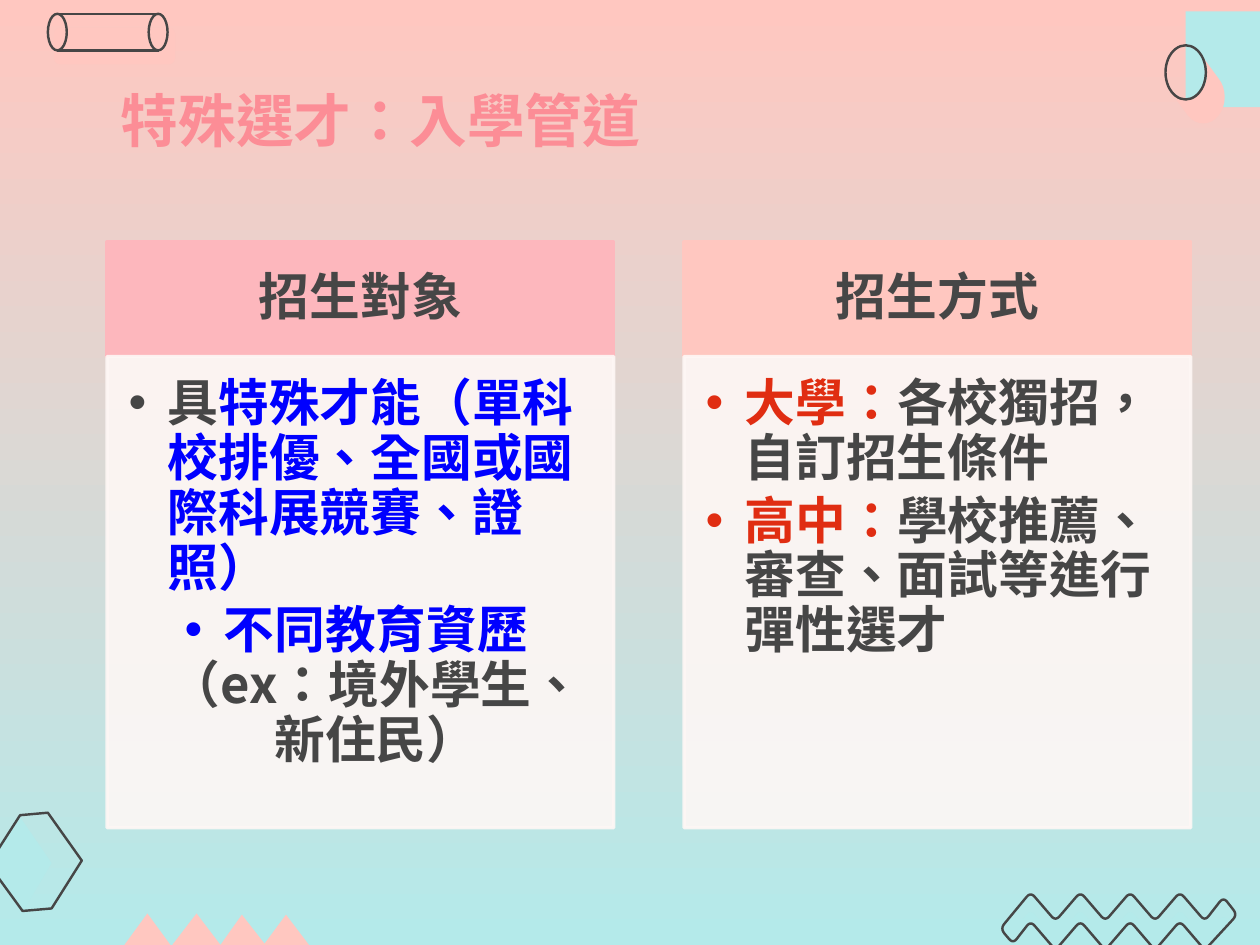
"""Build the slide on special talent admission."""
import math

from lxml import etree
from pptx import Presentation, util as u
from pptx.dml.color import RGBColor
from pptx.enum import lang, shapes, text
from pptx.oxml import ns

INK = {"pink": "FFC7C0", "teal": "B4EAEA", "dark": "464646", "rose": "FDB7BD",
       "pale": "FEF7F5", "title": "FC8D96", "blue": "0000FF", "red": "E02D12"}
FONT = "Noto Sans CJK SC"


def rgb(name):
    return RGBColor.from_string(INK[name])


def add(parent, tag, **attrs):
    return etree.SubElement(parent, ns.qn(tag), **attrs)


def fade(fill, alpha):
    for node in fill.iter(ns.qn("a:srgbClr")):
        add(node, "a:alpha", val=str(alpha * 1000))


def arc(x, y, rx, ry, start, end, count=16):
    angles = [math.radians(start + (end - start) * i / count) for i in range(count + 1)]
    return [(x + rx * math.cos(a), y + ry * math.sin(a)) for a in angles]


def bend(points, reach=0.05, count=6):
    out = []
    for i, (x, y) in enumerate(points):
        ends = []
        for px, py in (points[i - 1], points[(i + 1) % len(points)]):
            part = min(0.5, reach / math.hypot(px - x, py - y))
            ends.append((x + (px - x) * part, y + (py - y) * part))
        (ax, ay), (bx, by) = ends
        for t in (k / count for k in range(count + 1)):
            s = 1 - t
            out.append((s * s * ax + 2 * s * t * x + t * t * bx,
                        s * s * ay + 2 * s * t * y + t * t * by))
    return out


def write(frame, paras, size=29, bold=True, inset=None, anchor="TOP", after=0,
          space=None, bullet=False):
    frame.word_wrap = True
    frame.vertical_anchor = text.MSO_ANCHOR[anchor]
    if inset:
        (frame.margin_left, frame.margin_top,
         frame.margin_right, frame.margin_bottom) = map(u.Inches, inset)
    for i, (align, runs) in enumerate(paras):
        para = frame.paragraphs[0] if i == 0 else frame.add_paragraph()
        para.alignment = text.PP_ALIGN[align]
        para.space_after = u.Pt(after)
        if space:
            para.line_spacing = space
        if bullet:
            props = para._p.get_or_add_pPr()
            props.set("marL", str(u.Inches(0.31)))
            props.set("indent", str(-u.Inches(0.31)))
            add(props, "a:buFont", typeface="Arial")
            add(props, "a:buChar", char="•")
        for words, ink in runs:
            run = para.add_run()
            run.text = words
            font = run.font
            font.size, font.bold, font.name = u.Pt(size), bold, FONT
            font.language_id = lang.MSO_LANGUAGE_ID.TRADITIONAL_CHINESE
            font.color.rgb = rgb(ink)
            add(run._r.get_or_add_rPr(), "a:ea", typeface=FONT)


class Deck:
    """Hold the style and the current slide."""

    def __init__(self):
        self.show = Presentation()
        self.show.slide_width, self.show.slide_height = u.Inches(10), u.Inches(7.5)
        self.slide = self.show.slides.add_slide(self.show.slide_layouts[6])
        self.items = self.slide.shapes
        fill = self.slide.background.fill
        fill.gradient()
        fill.gradient_angle = 270
        for stop, ink, place in zip(fill.gradient_stops, ("pink", "teal"), (0, 1)):
            stop.color.rgb, stop.position = rgb(ink), place

    def paint(self, item, fill=None, line=None, width=1.4):
        item.shadow.inherit = False
        if fill:
            item.fill.solid()
            item.fill.fore_color.rgb = rgb(fill)
        else:
            item.fill.background()
        if line:
            item.line.color.rgb, item.line.width = rgb(line), u.Pt(width)
        else:
            item.line.fill.background()
        return item

    def shape(self, kind, box, **style):
        item = self.items.add_shape(shapes.MSO_SHAPE[kind], *map(u.Inches, box))
        return self.paint(item, **style)

    def free(self, points, **style):
        dots = [(u.Inches(x), u.Inches(y)) for x, y in points]
        pen = self.items.build_freeform(*dots[0])
        pen.add_line_segments(dots[1:], close=True)
        return self.paint(pen.convert_to_shape(), **style)

    def rule(self, x1, y1, x2, y2):
        line = self.items.add_connector(shapes.MSO_CONNECTOR.STRAIGHT,
                                        *map(u.Inches, (x1, y1, x2, y2)))
        line.line.color.rgb, line.line.width = rgb("dark"), u.Pt(1.4)
        add(line._element.spPr, "a:effectLst")

    def label(self, box, paras, **style):
        write(self.items.add_textbox(*map(u.Inches, box)).text_frame, paras, **style)

    def card(self, left, ink, head, paras):
        top = self.shape("RECTANGLE", (left, 1.92, 4.02, 0.91),
                         fill=ink, line=ink, width=2)
        write(top.text_frame, [("CENTER", [(head, "dark")])], anchor="MIDDLE",
              inset=(0.23, 0.13, 0.23, 0.13), space=0.9)
        body = self.shape("RECTANGLE", (left, 2.83, 4.02, 3.74),
                          fill="pale", line="pale", width=2)
        fade(body._element.spPr, 90)
        write(body.text_frame, paras, inset=(0.17, 0.17, 0.23, 0.25),
              space=0.9, after=4.35, bullet=True)


def adorn(deck):
    deck.shape("RECTANGLE", (9.41, 0.09, 0.86, 0.76), fill="teal")
    deck.free(arc(9.55, 0.77, 0.17, 0.21, -45, 135)
              + arc(9.41, 0.58, 0.17, 0.21, 135, -45), fill="pink")
    deck.shape("OVAL", (9.25, 0.36, 0.32, 0.43), line="dark")

    step = 0.395
    upper = [(8.18 + i * step / 2, 7.31 if i % 2 else 7.08) for i in range(8)]
    lower = [(x, y + 0.23) for x, y in upper[:0:-1]]
    wave = [(7.94, 7.37), *upper, (9.71, 7.12), (9.82, 7.26),
            *lower, (8.18, 7.31), (8.04, 7.49)]
    deck.free([(x, y + 0.14) for x, y in bend(wave)], fill="teal")
    deck.free(bend(wave), line="dark")

    deck.free([(0.15, 6.47), (-0.09, 6.86), (0.18, 7.24), (0.41, 6.85)], fill="teal")
    deck.free([(0.38, 6.45), (0.65, 6.83), (0.41, 7.21), (0.18, 7.23),
               (-0.09, 6.86), (0.16, 6.47)], line="dark")

    deck.shape("ROUNDED_RECTANGLE", (0.43, 0.22, 0.96, 0.29), fill="pink")
    for left in (0.38, 1.18):
        deck.shape("OVAL", (left, 0.11, 0.15, 0.29), line="dark")
    for y in (0.11, 0.4):
        deck.rule(0.45, y, 1.26, y)

    deck.free([(0.98, 7.51), (1.17, 7.25), (1.36, 7.51), (1.56, 7.25), (1.75, 7.5),
               (1.92, 7.26), (2.1, 7.49), (2.27, 7.26), (2.46, 7.51)], fill="pink")


def main():
    deck = Deck()
    adorn(deck)
    deck.card(0.85, "rose", "招生對象", [
        ("LEFT", [("具", "dark"),
                  ("特殊才能（單科校排優、全國或國際科展競賽、證照）", "blue")]),
        ("CENTER", [("不同教育資歷", "blue"), ("（ex：境外學生、新住民）", "dark")])])
    deck.card(5.43, "pink", "招生方式", [
        ("LEFT", [("大學：", "red"), ("各校獨招，自訂招生條件", "dark")]),
        ("LEFT", [("高中：", "red"), ("學校推薦、審查、面試等進行彈性選才", "dark")])])
    deck.label((0.86, 0.62, 5.64, 0.66), [("LEFT", [("特殊選才：入學管道", "title")])],
               size=33)
    deck.show.save("out.pptx")


if __name__ == "__main__":
    main()
